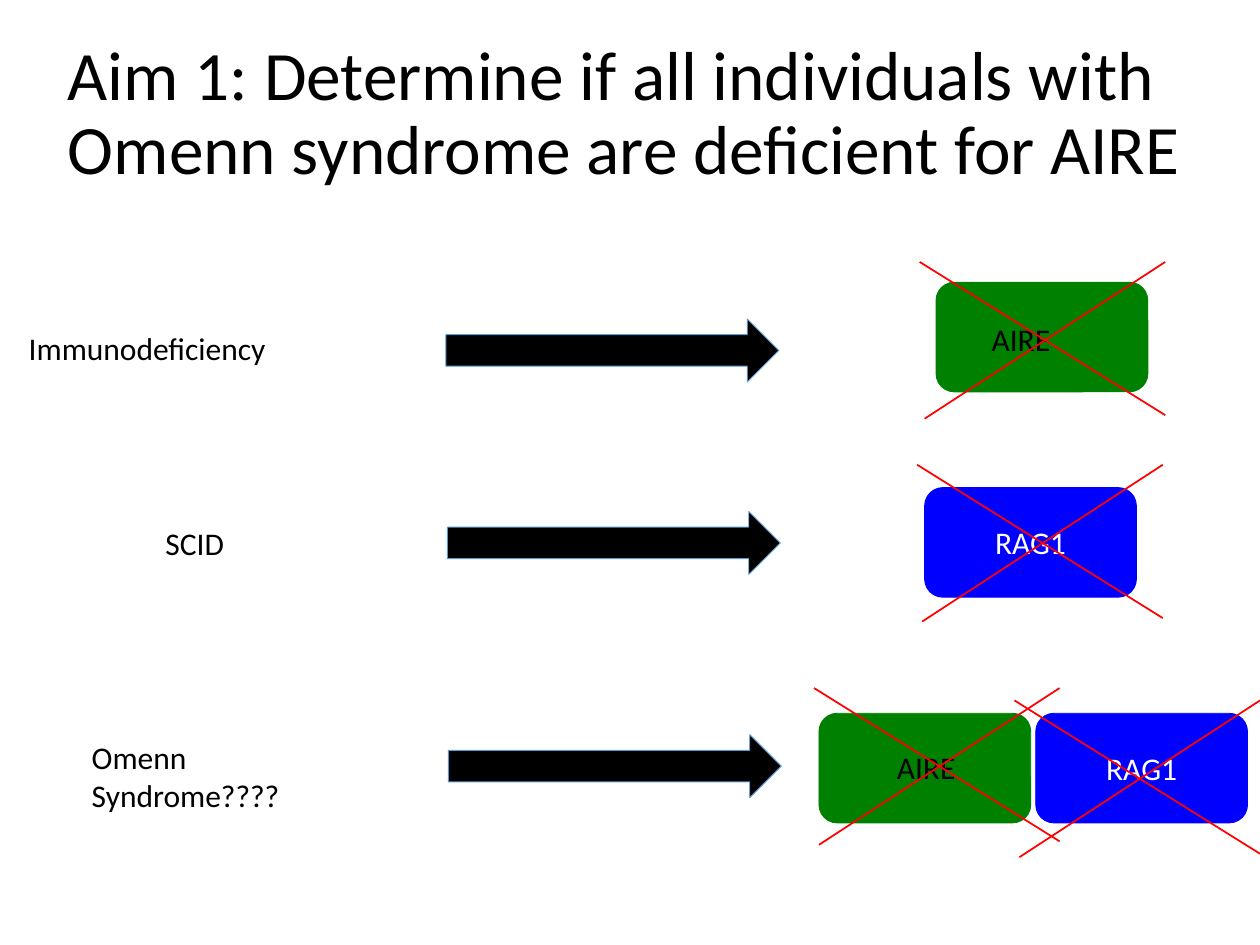
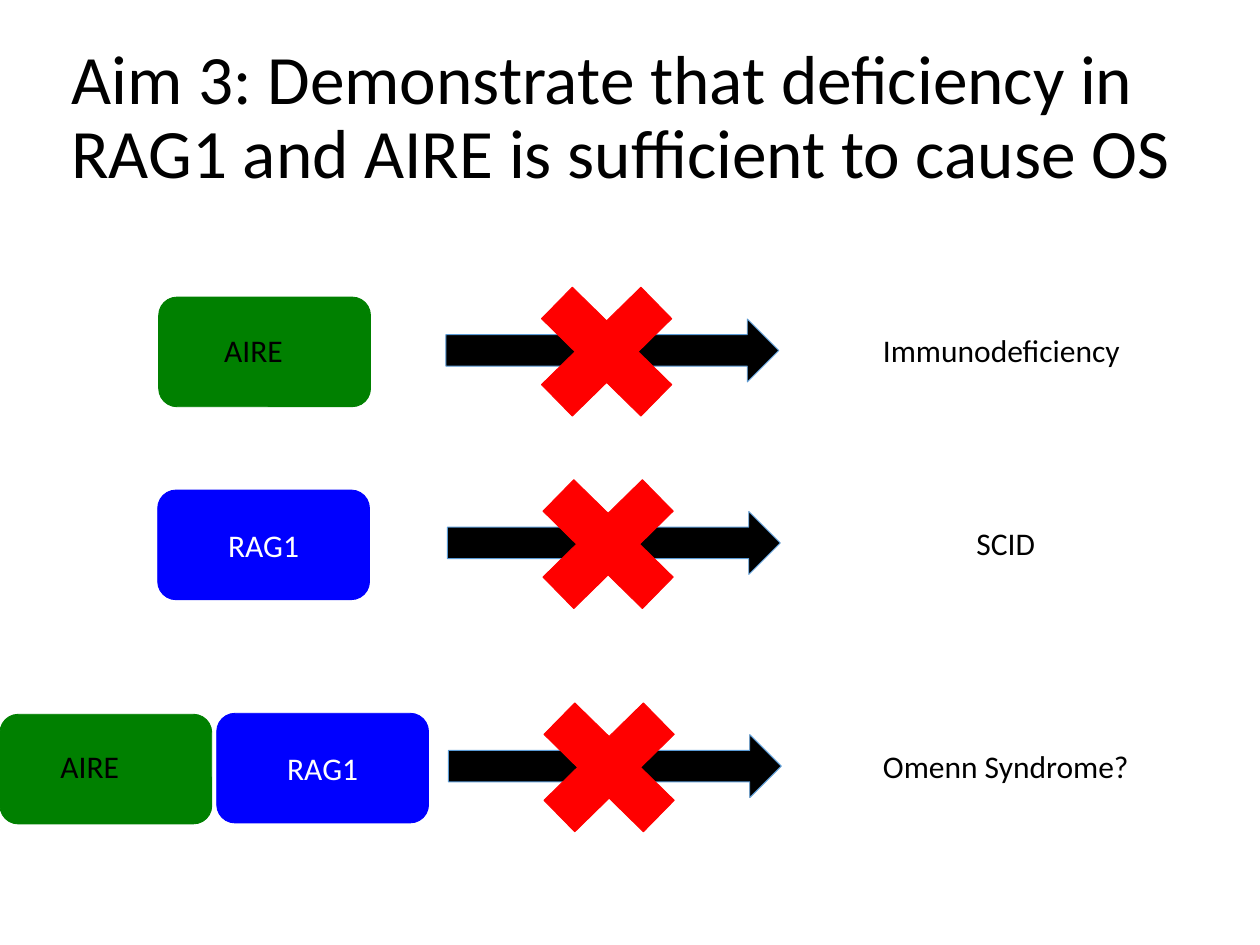
from pptx import Presentation
from pptx.dml.color import RGBColor
from pptx.enum.shapes import MSO_CONNECTOR, MSO_SHAPE
from pptx.enum.text import MSO_ANCHOR, PP_ALIGN
from pptx.oxml.ns import qn
from pptx.util import Cm, Pt
from lxml import etree

ROUND_RECT = MSO_SHAPE.ROUNDED_RECTANGLE
RIGHT_ARROW = MSO_SHAPE.RIGHT_ARROW
MULTIPLY = MSO_SHAPE.MATH_MULTIPLY
STRAIGHT = MSO_CONNECTOR.STRAIGHT
MIDDLE, TOP = MSO_ANCHOR.MIDDLE, MSO_ANCHOR.TOP
LEFT, CENTER = PP_ALIGN.LEFT, PP_ALIGN.CENTER

FONT = "Calibri"
COLORS = {
    "text": "000000",
    "light": "FFFFFF",
    "aire": "008000",
    "rag1": "0000FF",
    "arrow": "000000",
    "arrow_edge": "5B9BD5",
    "cross": "FF0000",
}

# Sizes and places in centimetres
GENE_W, GENE_H = 4.27, 2.21
PAIR_STEP = 4.37
ARROW_W, ARROW_H = 6.71, 1.27
ARROWS = [(8.99, 6.43), (9.02, 10.31), (9.04, 14.81)]
LABEL_H = 1.02


def rgb(name):
    return RGBColor.from_string(COLORS[name])


def write(tf, text, size, color="text", align=LEFT, anchor=TOP):
    tf.word_wrap = True
    tf.vertical_anchor = anchor
    p = tf.paragraphs[0]
    p.alignment = align
    r = p.add_run()
    r.text = text
    r.font.name = FONT
    r.font.size = Pt(size)
    r.font.color.rgb = rgb(color)
    return p


def add_title(s, x, y, w, text):
    tb = s.shapes.add_textbox(Cm(x), Cm(y), Cm(w), Cm(3.68))
    p = write(tb.text_frame, text, 39.6, anchor=MIDDLE)
    p.line_spacing = 0.9


def add_label(s, x, y, w, text, align=LEFT, h=LABEL_H):
    tb = s.shapes.add_textbox(Cm(x), Cm(y), Cm(w), Cm(h))
    write(tb.text_frame, text, 18, align=align)


def add_filled(s, kind, x, y, w, h, fill, edge):
    sp = s.shapes.add_shape(kind, Cm(x), Cm(y), Cm(w), Cm(h))
    sp.shadow.inherit = False
    sp.fill.solid()
    sp.fill.fore_color.rgb = rgb(fill)
    sp.line.color.rgb = rgb(edge)
    sp.line.width = Pt(0.5)
    return sp


def add_aire(s, x, y, label_dx, label_dy):
    """Green gene box; its name sits in a text box offset from the corner."""
    add_filled(s, ROUND_RECT, x, y, GENE_W, GENE_H, "aire", "aire")
    add_label(s, x + label_dx, y + label_dy, 2.08, "AIRE")


def add_rag1(s, x, y):
    sp = add_filled(s, ROUND_RECT, x, y, GENE_W, GENE_H, "rag1", "rag1")
    write(sp.text_frame, "RAG1", 18, "light", CENTER, MIDDLE)


def add_arrows(s, blocked=False):
    """One arrow per row, with a thick cross over each when blocked."""
    for x, y in ARROWS:
        add_filled(s, RIGHT_ARROW, x, y, ARROW_W, ARROW_H, "arrow", "arrow_edge")
        if blocked:
            add_filled(s, MULTIPLY, x + 1.31, y - 1.23, 3.86, 3.78, "cross", "cross")


def add_line(s, x1, y1, x2, y2):
    c = s.shapes.add_connector(STRAIGHT, Cm(x1), Cm(y1), Cm(x2), Cm(y2))
    c.line.color.rgb = rgb("cross")
    c.line.width = Pt(1)
    etree.SubElement(c._element.spPr, qn("a:effectLst"))


def add_thin_cross(s, x, y):
    right = x + 4.95
    add_line(s, x, y, right, y + 3.09)
    add_line(s, right, y, x + 0.1, y + 3.16)


def build_aim1(s):
    add_title(s, 1.12, 0.48, 23.42,
              "Aim 1: Determine if all individuals with Omenn syndrome "
              "are deficient for AIRE")
    add_label(s, 0.33, 6.5, 6.02, "Immunodeficiency")
    add_label(s, 1.73, 10.44, 4.39, "SCID", CENTER)
    add_label(s, 1.6, 14.76, 4.95, "Omenn Syndrome????", h=1.8)
    add_arrows(s)
    add_aire(s, 18.87, 5.69, 0.87, 0.63)
    add_rag1(s, 18.64, 9.83)
    add_aire(s, 16.51, 14.38, 1.32, 0.58)
    add_rag1(s, 16.51 + PAIR_STEP, 14.38)
    for x, y in [(18.54, 5.28), (18.49, 9.37), (16.41, 13.87), (20.45, 14.12)]:
        add_thin_cross(s, x, y)


def build_aim3(s):
    add_title(s, 1.19, 0.56, 23.14,
              "Aim 3: Demonstrate that deficiency in RAG1 and AIRE "
              "is sufficient to cause OS")
    add_aire(s, 3.2, 5.99, 1.07, 0.56)
    add_rag1(s, 3.18, 9.88)
    add_aire(s, 0, 14.4, 0.97, 0.54)
    add_rag1(s, PAIR_STEP, 14.38)
    add_arrows(s, blocked=True)
    add_label(s, 17.55, 6.55, 5.46, "Immunodeficiency")
    add_label(s, 18.08, 10.44, 4.39, "SCID", CENTER)
    add_label(s, 17.55, 14.94, 6.78, "Omenn Syndrome?")


def main():
    prs = Presentation()
    prs.slide_width, prs.slide_height = Cm(25.4), Cm(19.05)
    blank = prs.slide_layouts[6]
    for build in (build_aim1, build_aim3):
        build(prs.slides.add_slide(blank))
    prs.save("out.pptx")


if __name__ == "__main__":
    main()
